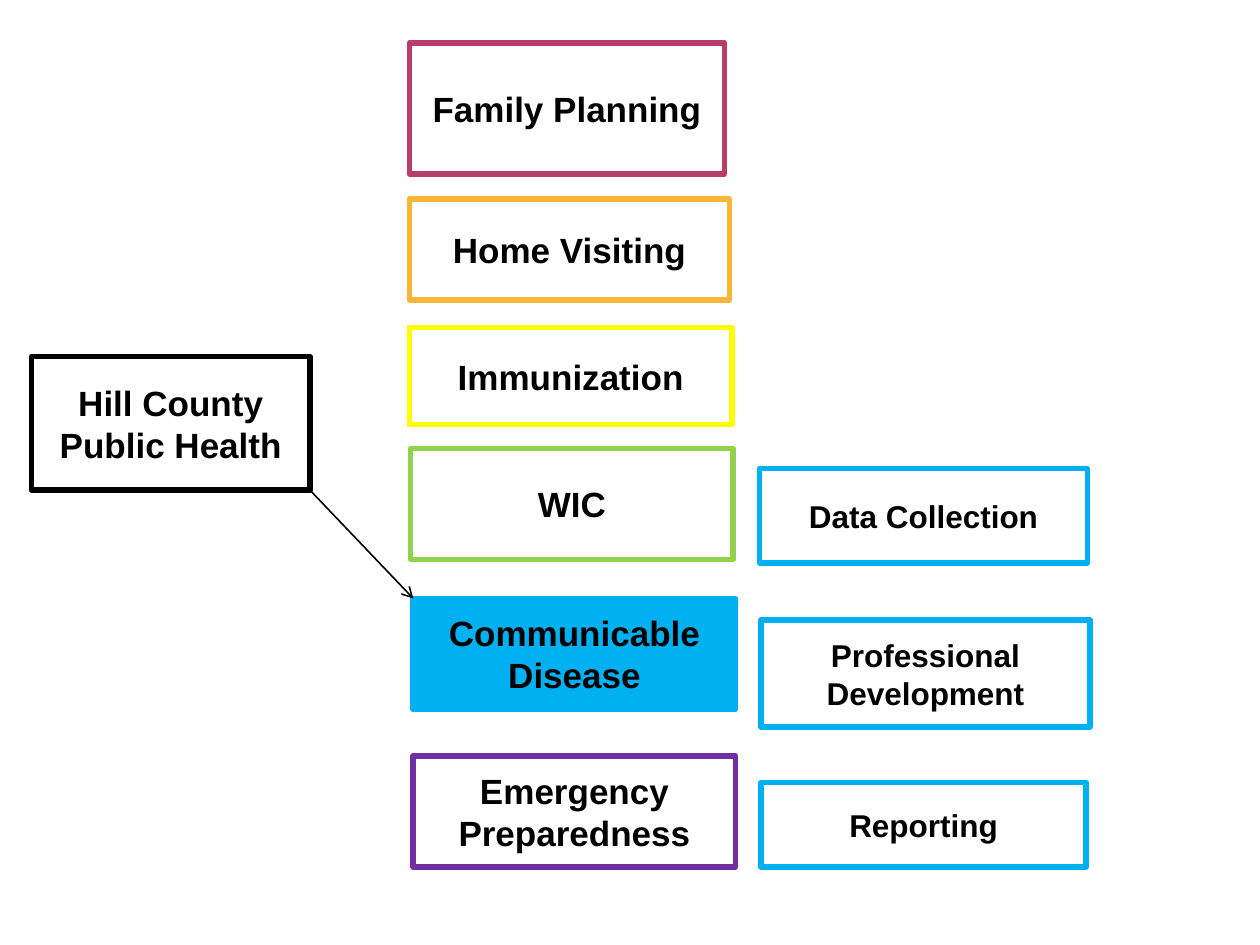
"""Build the Hill County Public Health programme chart."""
from dataclasses import dataclass

from lxml import etree
from pptx import Presentation
from pptx.dml.color import RGBColor
from pptx.enum.shapes import MSO_CONNECTOR, MSO_SHAPE
from pptx.enum.text import MSO_ANCHOR, PP_ALIGN
from pptx.oxml.ns import qn
from pptx.util import Inches, Pt

RECTANGLE = MSO_SHAPE.RECTANGLE
STRAIGHT = MSO_CONNECTOR.STRAIGHT
MIDDLE = MSO_ANCHOR.MIDDLE
CENTER = PP_ALIGN.CENTER


@dataclass(frozen=True)
class Theme:
    """Colours, type sizes and line widths of the chart."""
    font: str = "Arial"
    program_size: int = 20
    task_size: int = 18
    black: str = "000000"
    white: str = "FFFFFF"
    rose: str = "B83D68"
    orange: str = "F9B639"
    yellow: str = "FFFF00"
    green: str = "92D050"
    blue: str = "00B0F0"
    purple: str = "7030A0"
    border: float = 3.15
    arrow: float = 0.9


THEME = Theme()
DEPARTMENT = ("Hill County Public Health", 0.25, 2.83, 2.21, 1.06)
PROGRAMS = (
    ("Family Planning", 3.25, 0.34, 2.5, 1.04, THEME.rose),
    ("Home Visiting", 3.25, 1.58, 2.54, 0.8, THEME.orange),
    ("Immunization", 3.25, 2.6, 2.56, 0.77, THEME.yellow),
    ("WIC", 3.26, 3.56, 2.56, 0.88, THEME.green),
    ("Communicable Disease", 3.28, 4.75, 2.56, 0.88, THEME.blue),
    ("Emergency Preparedness", 3.28, 6, 2.56, 0.88, THEME.purple),
)
TASKS = (
    ("Data Collection", 6.03, 3.72, 2.6, 0.75),
    ("Professional Development", 6.04, 4.92, 2.61, 0.85),
    ("Reporting", 6.04, 6.21, 2.58, 0.67),
)
ACTIVE_PROGRAM = "Communicable Disease"


def color(value):
    """Return a hexadecimal value as a colour."""
    return RGBColor.from_string(value)


def add_box(slide, label, left, top, width, height, border, size, fill=THEME.white):
    """Add a bordered rectangle with a centred bold label."""
    shape = slide.shapes.add_shape(
        RECTANGLE, Inches(left), Inches(top), Inches(width), Inches(height))
    shape.shadow.inherit = False
    shape.fill.solid()
    shape.fill.fore_color.rgb = color(fill)
    shape.line.color.rgb = color(border)
    shape.line.width = Pt(THEME.border)
    etree.SubElement(shape.line._get_or_add_ln(), qn("a:round"))
    frame = shape.text_frame
    frame.word_wrap = True
    frame.vertical_anchor = MIDDLE
    frame.text = label
    paragraph = frame.paragraphs[0]
    paragraph.alignment = CENTER
    paragraph.font.name = THEME.font
    paragraph.font.size = Pt(size)
    paragraph.font.bold = True
    paragraph.font.color.rgb = color(THEME.black)
    return shape


def add_arrow(slide, source, target):
    """Join the source's lower right corner to the target's upper left one."""
    connector = slide.shapes.add_connector(
        STRAIGHT, source.left + source.width, source.top + source.height,
        target.left, target.top)
    connector.line.color.rgb = color(THEME.black)
    connector.line.width = Pt(THEME.arrow)
    etree.SubElement(connector.line._get_or_add_ln(), qn("a:tailEnd"), type="arrow")
    etree.SubElement(connector._element.spPr, qn("a:effectLst"))


def main():
    """Build and save the slide."""
    presentation = Presentation()
    presentation.slide_width = Inches(10)
    presentation.slide_height = Inches(7.5)
    slide = presentation.slides.add_slide(presentation.slide_layouts[6])
    department = add_box(slide, *DEPARTMENT, THEME.black, THEME.program_size)
    programs = {}
    for label, *place, border in PROGRAMS:
        fill = border if label == ACTIVE_PROGRAM else THEME.white
        programs[label] = add_box(
            slide, label, *place, border, THEME.program_size, fill)
    for task in TASKS:
        add_box(slide, *task, THEME.blue, THEME.task_size)
    add_arrow(slide, department, programs[ACTIVE_PROGRAM])
    presentation.save("out.pptx")


if __name__ == "__main__":
    main()
